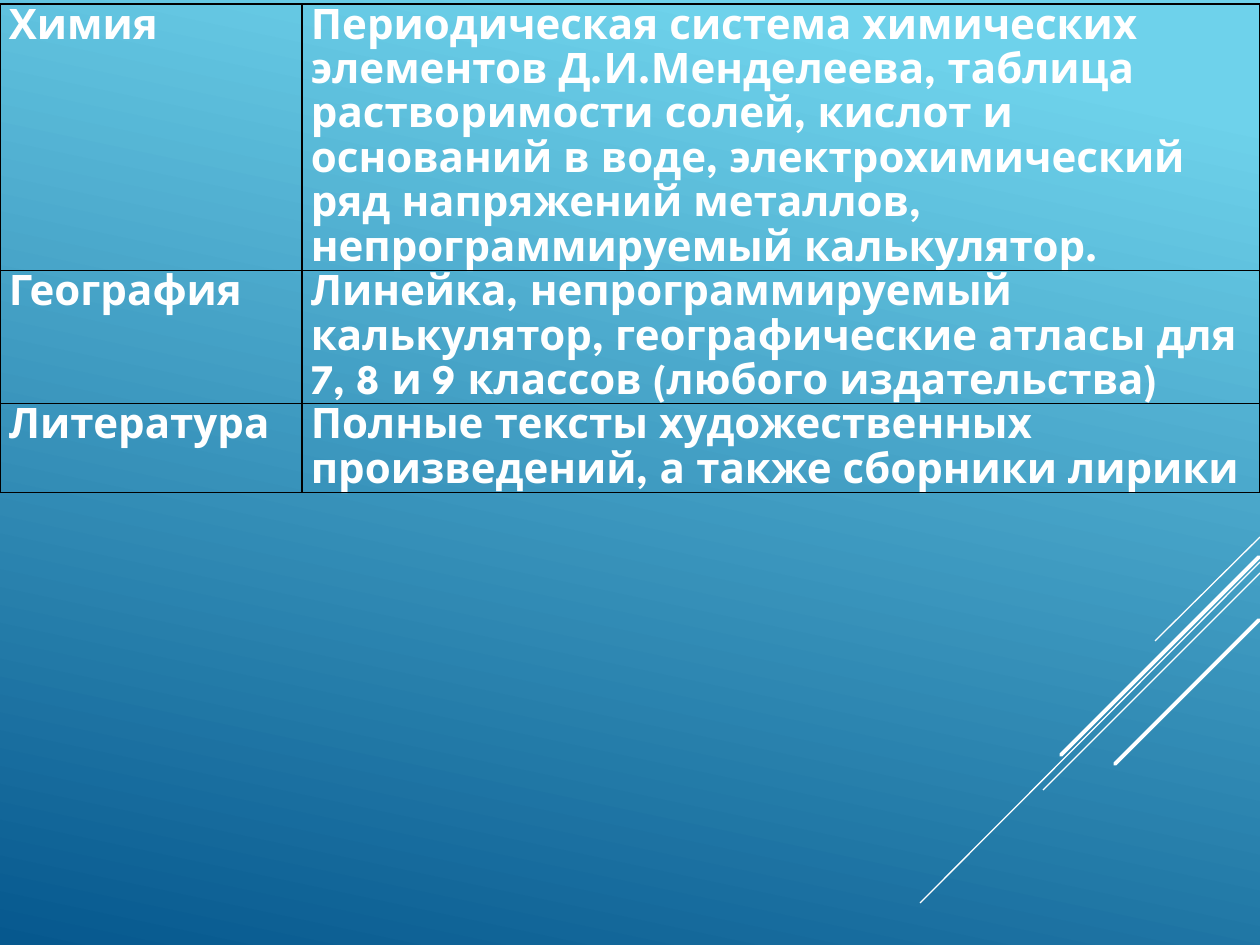
from dataclasses import dataclass

from lxml import etree
from pptx import Presentation
from pptx import util as u
from pptx.dml.color import RGBColor
from pptx.enum import shapes, text
from pptx.oxml import ns


@dataclass(frozen=True)
class Theme:
    font: str = "League Spartan"
    size: int = 24
    spacing: float = 1.15
    ink: str = "FFFFFF"
    border: str = "000000"
    border_pt: int = 1
    sky: str = "6ED2EB"
    deep: str = "06588E"
    thin: float = 0.75
    thick: float = 2.25


@dataclass(frozen=True)
class Stripe:
    x1: int
    y1: int
    x2: int
    y2: int
    width: float


@dataclass(frozen=True)
class Subject:
    name: str
    materials: str
    height: int


THEME = Theme()
COLUMNS = (302, 958)
STRIPES = (
    Stripe(1260, 537, 1155, 641, THEME.thin),
    Stripe(1260, 562, 920, 903, THEME.thin),
    Stripe(1260, 573, 1043, 790, THEME.thin),
    Stripe(1259, 557, 1061, 755, THEME.thick),
    Stripe(1259, 620, 1115, 764, THEME.thick),
)
SUBJECTS = (
    Subject("Химия", "Периодическая система химических элементов Д.И.Менделеева, "
            "таблица растворимости солей, кислот и оснований в воде, "
            "электрохимический ряд напряжений металлов, "
            "непрограммируемый калькулятор.", 164),
    Subject("География", "Линейка, непрограммируемый калькулятор, географические "
            "атласы для 7, 8 и 9 классов (любого издательства)", 123),
    Subject("Литература", "Полные тексты художественных произведений, "
            "а также сборники лирики", 82),
)


def px(n: int) -> u.Emu:
    return u.Emu(round(n * 914400 / 126))


def rgb(color: str) -> RGBColor:
    return RGBColor.from_string(color)


def write(tf, words: str, *, align=None, size=THEME.size, color=THEME.ink, bold=True) -> None:
    p = tf.paragraphs[0]
    p.alignment, p.line_spacing = align, THEME.spacing
    r = p.add_run()
    r.text = words
    r.font.name, r.font.size, r.font.bold = THEME.font, u.Pt(size), bold
    r.font.color.rgb = rgb(color)


def paint_background(s) -> None:
    fill = s.background.fill
    fill.gradient()
    fill.gradient_angle = 360 - 102
    for stop, color, position in zip(fill.gradient_stops, (THEME.sky, THEME.deep), (0.1, 1)):
        stop.color.rgb, stop.position = rgb(color), position


def draw_stripe(s, stripe: Stripe) -> None:
    c = s.shapes.add_connector(shapes.MSO_CONNECTOR.STRAIGHT, px(stripe.x1), px(stripe.y1),
                               px(stripe.x2), px(stripe.y2))
    c.line.color.rgb, c.line.width = rgb(THEME.ink), u.Pt(stripe.width)
    if stripe.width == THEME.thick:
        c.get_or_add_ln().set("cap", "rnd")
    etree.SubElement(c._element.spPr, ns.qn("a:effectLst"))


def frame_cell(cell) -> None:
    tc_pr = cell._tc.get_or_add_tcPr()
    for side in ("lnL", "lnR", "lnT", "lnB"):
        ln = etree.SubElement(tc_pr, ns.qn(f"a:{side}"), w=str(u.Pt(THEME.border_pt)))
        solid = etree.SubElement(ln, ns.qn("a:solidFill"))
        etree.SubElement(solid, ns.qn("a:srgbClr"), val=THEME.border)
    cell.fill.background()


def draw_subjects(s) -> None:
    height = sum(subject.height for subject in SUBJECTS)
    table = s.shapes.add_table(len(SUBJECTS), len(COLUMNS), 0, px(4),
                               px(sum(COLUMNS)), px(height)).table
    table.first_row = table.horz_banding = False
    for column, width in zip(table.columns, COLUMNS):
        column.width = px(width)
    for row, subject in zip(table.rows, SUBJECTS):
        row.height = px(subject.height)
        cells = zip(row.cells, (subject.name, subject.materials),
                    (text.PP_ALIGN.JUSTIFY, None))
        for cell, words, align in cells:
            cell.margin_left = cell.margin_right = px(9)
            cell.margin_top = cell.margin_bottom = 0
            frame_cell(cell)
            write(cell.text_frame, words, align=align)


def main() -> None:
    prs = Presentation()
    prs.slide_width, prs.slide_height = px(1260), px(945)
    s = prs.slides.add_slide(prs.slide_layouts[6])

    # Backdrop: gradient and diagonal stripes
    paint_background(s)
    for stripe in STRIPES:
        draw_stripe(s, stripe)

    # Permitted materials by subject
    draw_subjects(s)
    prs.save("out.pptx")


if __name__ == "__main__":
    main()
